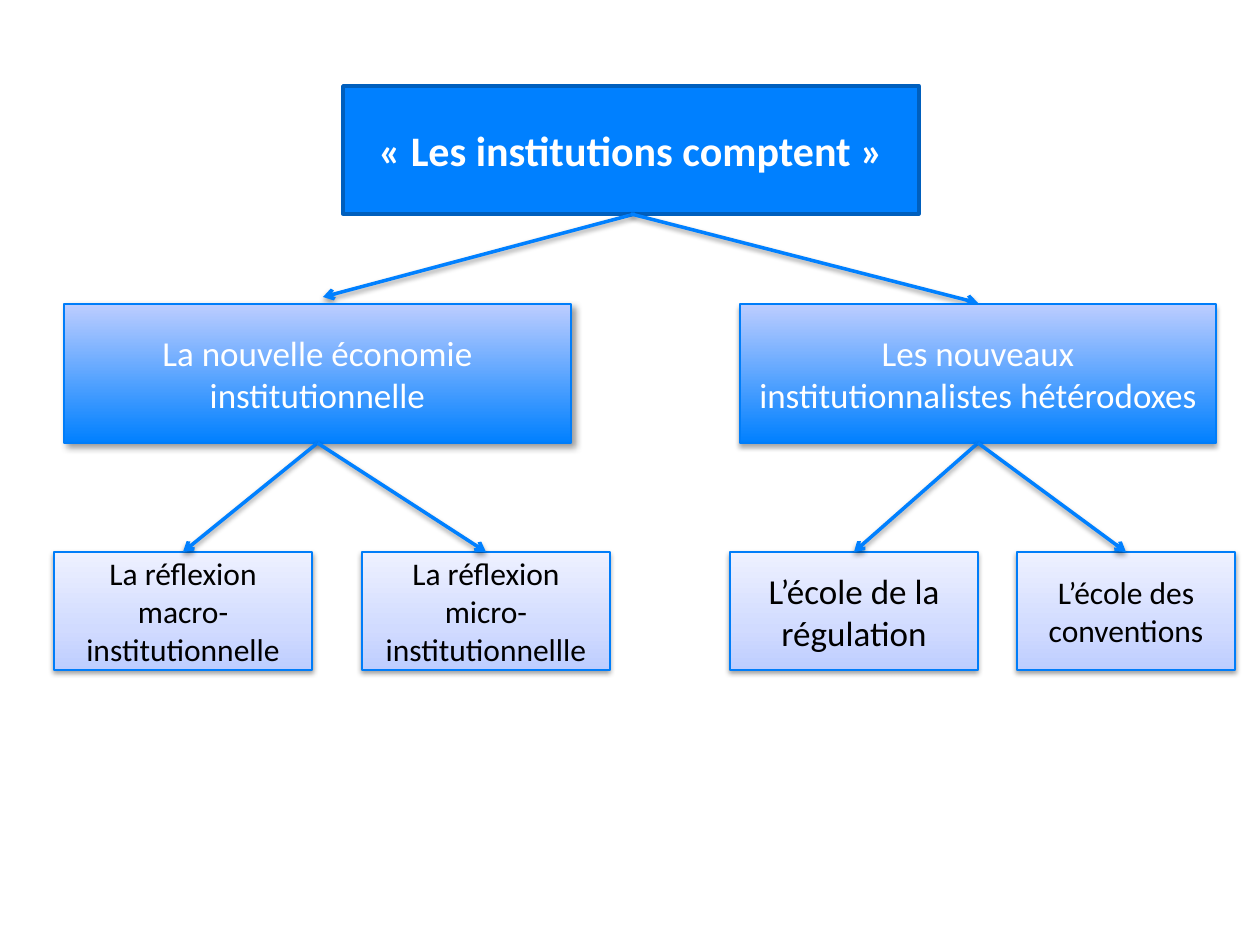
import pptx
import pptx.dml.color
import pptx.enum.shapes
import pptx.enum.text
import pptx.oxml
import pptx.oxml.ns
import pptx.util
from lxml import etree

PX_PER_INCH = 126
WHITE, BLACK, BLUE = "FFFFFF", "000000", "0080FF"
BRANCH_STOPS = [(0, BLUE), (100, "BDCDFF")]
LEAF_STOPS = [(0, "BDCDFF"), (35, "D1DBFF"), (100, "EEF1FF")]
# opacity in percent, blur and distance in points, direction in degrees
LEFT_SHADOW = (40, 4, 3, 45)
RIGHT_SHADOW = (35, 3.1, 1.8, 90)
SOFT_SHADOW = (38, 3.1, 1.6, 90)


def px(length):
    return pptx.util.Emu(round(length * 914400 / PX_PER_INCH))


def color(hex_string):
    return pptx.dml.color.RGBColor.from_string(hex_string)


def add_node(parent, tag, **attributes):
    node = etree.SubElement(parent, pptx.oxml.ns.qn(tag))
    for name, value in attributes.items():
        node.set(name, str(value))
    return node


def cast_shadow(effects, opacity, blur, distance, direction):
    shadow = add_node(effects, "a:outerShdw", blurRad=pptx.util.Pt(blur),
                      dist=pptx.util.Pt(distance), dir=direction * 60000,
                      rotWithShape=0)
    tint = add_node(shadow, "a:srgbClr", val=BLACK)
    add_node(tint, "a:alpha", val=opacity * 1000)


def fill_upward(fill, stops):
    """Fill with a gradient whose first stop is at the bottom."""
    fill.gradient()
    fill.gradient_angle = 90
    stop_list = fill._xPr.find(".//" + pptx.oxml.ns.qn("a:gsLst"))
    for old_stop in list(stop_list):
        stop_list.remove(old_stop)
    for position, hex_string in stops:
        stop = add_node(stop_list, "a:gs", pos=position * 1000)
        add_node(stop, "a:srgbClr", val=hex_string)


def write(frame, text, size=18, hex_string=BLACK, bold=False):
    frame.word_wrap = True
    frame.vertical_anchor = pptx.enum.text.MSO_ANCHOR.MIDDLE
    paragraph = frame.paragraphs[0]
    paragraph.alignment = pptx.enum.text.PP_ALIGN.CENTER
    run = paragraph.add_run()
    run.text = text
    run.font.name = "Calibri"
    run.font.size = pptx.util.Pt(size)
    run.font.bold = bold
    run.font.color.rgb = color(hex_string)


def add_box(slide, box, text, stops=None, outline="007DF9", weight=0.75,
            shadow=None, **text_format):
    rectangle = slide.shapes.add_shape(
        pptx.enum.shapes.MSO_SHAPE.RECTANGLE, *map(px, box))
    if stops:
        fill_upward(rectangle.fill, stops)
    else:
        rectangle.fill.solid()
        rectangle.fill.fore_color.rgb = color(BLUE)
    rectangle.line.color.rgb = color(outline)
    rectangle.line.width = pptx.util.Pt(weight)
    rectangle.shadow.inherit = False
    if shadow:
        effects = rectangle._element.spPr.find(pptx.oxml.ns.qn("a:effectLst"))
        cast_shadow(effects, *shadow)
    write(rectangle.text_frame, text, **text_format)


def add_arrow(slide, start, end):
    arrow = slide.shapes.add_connector(
        pptx.enum.shapes.MSO_CONNECTOR.STRAIGHT, *map(px, start + end))
    arrow.line.color.rgb = color(BLUE)
    arrow.line.width = pptx.util.Pt(2)
    add_node(arrow.line._get_or_add_ln(), "a:tailEnd", type="arrow")
    effects = add_node(arrow._element.spPr, "a:effectLst")
    cast_shadow(effects, *SOFT_SHADOW)


def add_branch(slide, box, text, shadow, leaves):
    """Add a school of thought with an arrow down to each of its leaves."""
    left, top, width, height = box
    add_box(slide, box, text, stops=BRANCH_STOPS, shadow=shadow,
            size=20, hex_string=WHITE)
    leaf_top = top + 248
    for offset, leaf_width, leaf_text, size in leaves:
        leaf_left = left + offset
        add_box(slide, (leaf_left, leaf_top, leaf_width, 118), leaf_text,
                stops=LEAF_STOPS, shadow=SOFT_SHADOW, size=size)
        add_arrow(slide, (left + width / 2, top + height),
                  (leaf_left + leaf_width / 2, leaf_top))


def add_root(slide, box, text):
    """Add the main idea with an arrow down to each branch."""
    left, top, width, height = box
    add_box(slide, box, text, outline="005FBD", weight=2,
            size=24, hex_string=WHITE, bold=True)
    middle, bottom = left + width // 2, top + height
    add_arrow(slide, (middle + 4, bottom), (middle - 308, bottom + 83))
    add_arrow(slide, (middle, bottom), (middle + 347, bottom + 89))


def main():
    deck = pptx.Presentation()
    deck.slide_width, deck.slide_height = px(1260), px(945)
    slide = deck.slides.add_slide(deck.slide_layouts[6])
    add_root(slide, (343, 86, 576, 128), "« Les institutions comptent »")
    add_branch(slide, (64, 304, 507, 139),
               "La nouvelle économie institutionnelle", LEFT_SHADOW,
               [(-10, 258, "La réflexion macro-institutionnelle", 18),
                (298, 248, "La réflexion micro- institutionnellle", 18)])
    add_branch(slide, (740, 304, 476, 139),
               "Les nouveaux institutionnalistes hétérodoxes", RIGHT_SHADOW,
               [(-10, 248, "L’école de la régulation", 20),
                (277, 218, "L’école des conventions", 18)])
    deck.save("out.pptx")


if __name__ == "__main__":
    main()
